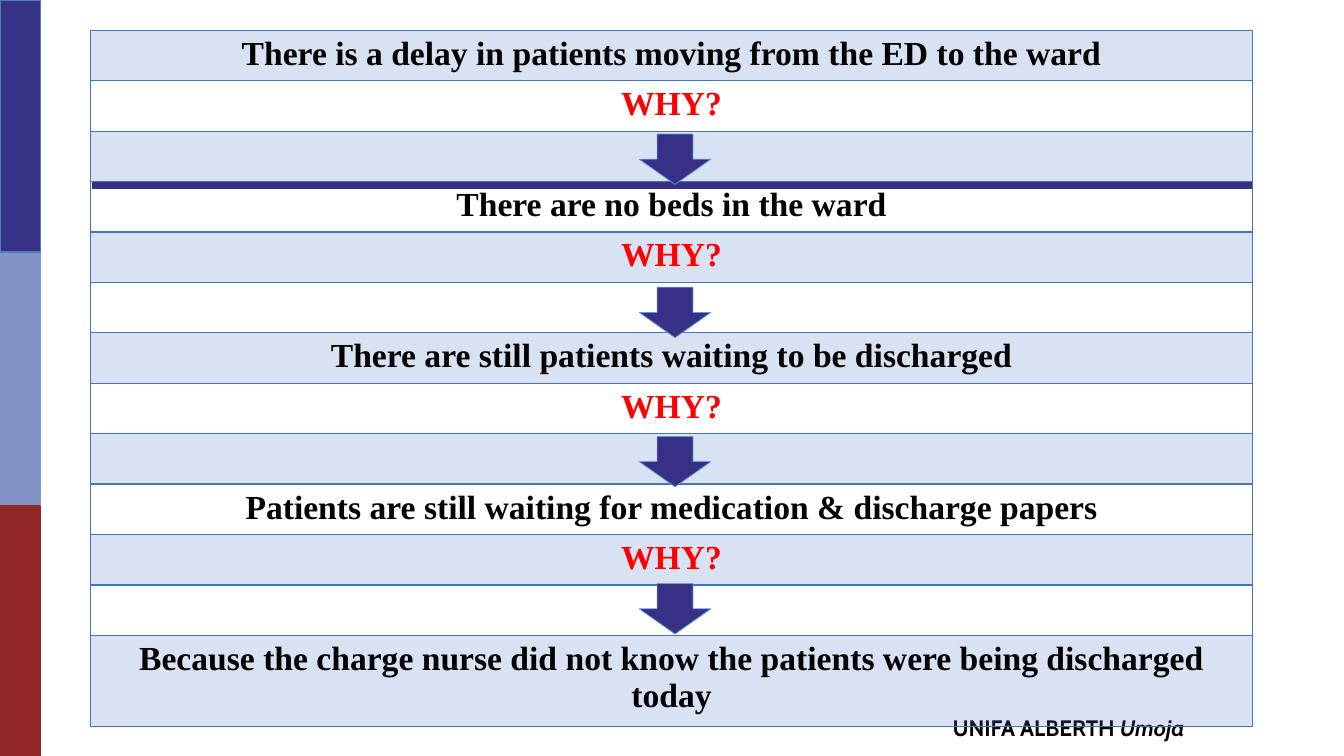
from dataclasses import dataclass

from lxml.etree import SubElement
from pptx import Presentation
from pptx.dml.color import RGBColor
from pptx.enum.shapes import MSO_CONNECTOR as Link, MSO_SHAPE as Form
from pptx.enum.text import PP_ALIGN as Align
from pptx.oxml.ns import qn
from pptx.util import Emu, Pt

PX = 9144  # EMU in one px, 100 px to the inch

BLACK = RGBColor(0x00, 0x00, 0x00)
RED = RGBColor(0xFF, 0x00, 0x00)
NAVY = RGBColor(0x37, 0x31, 0x85)
INDIGO = RGBColor(0x38, 0x30, 0x87)
LILAC = RGBColor(0x83, 0x93, 0xC5)
MAROON = RGBColor(0x93, 0x28, 0x28)
STEEL = RGBColor(0x4E, 0x7F, 0xB4)
SKY = RGBColor(0x5B, 0x9B, 0xD5)
BLUE = RGBColor(0x44, 0x72, 0xC4)

LEFT, TOP, WIDTH, ROW, LAST = 90, 30, 1152, 50, 90
WHY = "WHY?"
CAUSES = [
    "There is a delay in patients moving from the ED to the ward",
    "There are no beds in the ward",
    "There are still patients waiting to be discharged",
    "Patients are still waiting for medication & discharge papers",
    "Because the charge nurse did not know the patients were being discharged today",
]


@dataclass
class Block:
    form: Form
    left: int
    top: int
    width: int
    height: int
    fill: RGBColor
    line: RGBColor
    weight: float = 1


BARS = [
    Block(Form.RECTANGLE, 0, 250, 40, 250, LILAC, LILAC),
    Block(Form.RECTANGLE, 0, 502, 40, 248, MAROON, MAROON),
    Block(Form.RECTANGLE, 0, 0, 40, 250, NAVY, STEEL),
]
ARROWS = [
    Block(Form.DOWN_ARROW, 634, top, 71, 50, INDIGO, SKY, 0.5)
    for top in (133, 285, 433, 579)
]


def px(count: int) -> Emu:
    return Emu(count * PX)


def add_block(slide, block: Block) -> None:
    shape = slide.shapes.add_shape(
        block.form, px(block.left), px(block.top), px(block.width), px(block.height)
    )
    shape.shadow.inherit = False
    shape.fill.solid()
    shape.fill.fore_color.rgb = block.fill
    shape.line.color.rgb = block.line
    shape.line.width = Pt(block.weight)


def add_rule(slide) -> None:
    rule = slide.shapes.add_connector(Link.STRAIGHT, px(91), px(184), px(1242), px(184))
    rule.line.color.rgb = INDIGO
    rule.line.width = Pt(4.5)
    SubElement(rule._element.spPr, qn("a:effectLst"))


def add_footer(slide) -> None:
    box = slide.shapes.add_textbox(px(935), px(704), px(383), px(36))
    box.text_frame.word_wrap = True
    line = box.text_frame.paragraphs[0]
    for text, slant in (("UNIFA ALBERTH ", False), ("Umoja", True)):
        run = line.add_run()
        run.text = text
        font = run.font
        font.name, font.size, font.bold, font.italic = "Cabin", Pt(16), True, slant
        font.color.rgb = BLACK


def add_border(cell) -> None:
    props = cell._tc.get_or_add_tcPr()
    for side in ("a:lnL", "a:lnR", "a:lnT", "a:lnB"):
        edge = SubElement(props, qn(side), w=str(Pt(1)))
        fill = SubElement(edge, qn("a:solidFill"))
        SubElement(fill, qn("a:srgbClr"), val=str(BLUE))


def fill_cell(cell, tinted: bool) -> None:
    """Tint the cell in see-through blue, or leave it clear."""
    if not tinted:
        cell.fill.background()
        return
    cell.fill.solid()
    cell.fill.fore_color.rgb = BLUE
    tint = cell._tc.tcPr.find(qn("a:solidFill")).find(qn("a:srgbClr"))
    SubElement(tint, qn("a:alpha"), val="20000")


def set_text(cell, text: str) -> None:
    line = cell.text_frame.paragraphs[0]
    line.text = text
    line.alignment = Align.CENTER
    for run in line.runs:
        font = run.font
        font.name, font.size, font.bold = "Times New Roman", Pt(24), True
        font.color.rgb = RED if text == WHY else BLACK


def add_chain(slide) -> None:
    """Each cause is followed by its question and a row for the arrow."""
    texts = [text for cause in CAUSES for text in (cause, WHY, "")][:-2]
    count = len(texts)
    height = ROW * (count - 1) + LAST
    table = slide.shapes.add_table(
        count, 1, px(LEFT), px(TOP), px(WIDTH), px(height)
    ).table
    table.first_row = table.horz_banding = False
    for index, text in enumerate(texts):
        table.rows[index].height = px(LAST if index == count - 1 else ROW)
        cell = table.cell(index, 0)
        add_border(cell)
        fill_cell(cell, index % 2 == 0)
        set_text(cell, text)


def main() -> None:
    deck = Presentation()
    deck.slide_width, deck.slide_height = px(1333), px(750)
    slide = deck.slides.add_slide(deck.slide_layouts[6])
    for bar in BARS:
        add_block(slide, bar)
    add_rule(slide)
    add_footer(slide)
    add_chain(slide)
    for arrow in ARROWS:
        add_block(slide, arrow)
    deck.save("out.pptx")


if __name__ == "__main__":
    main()
